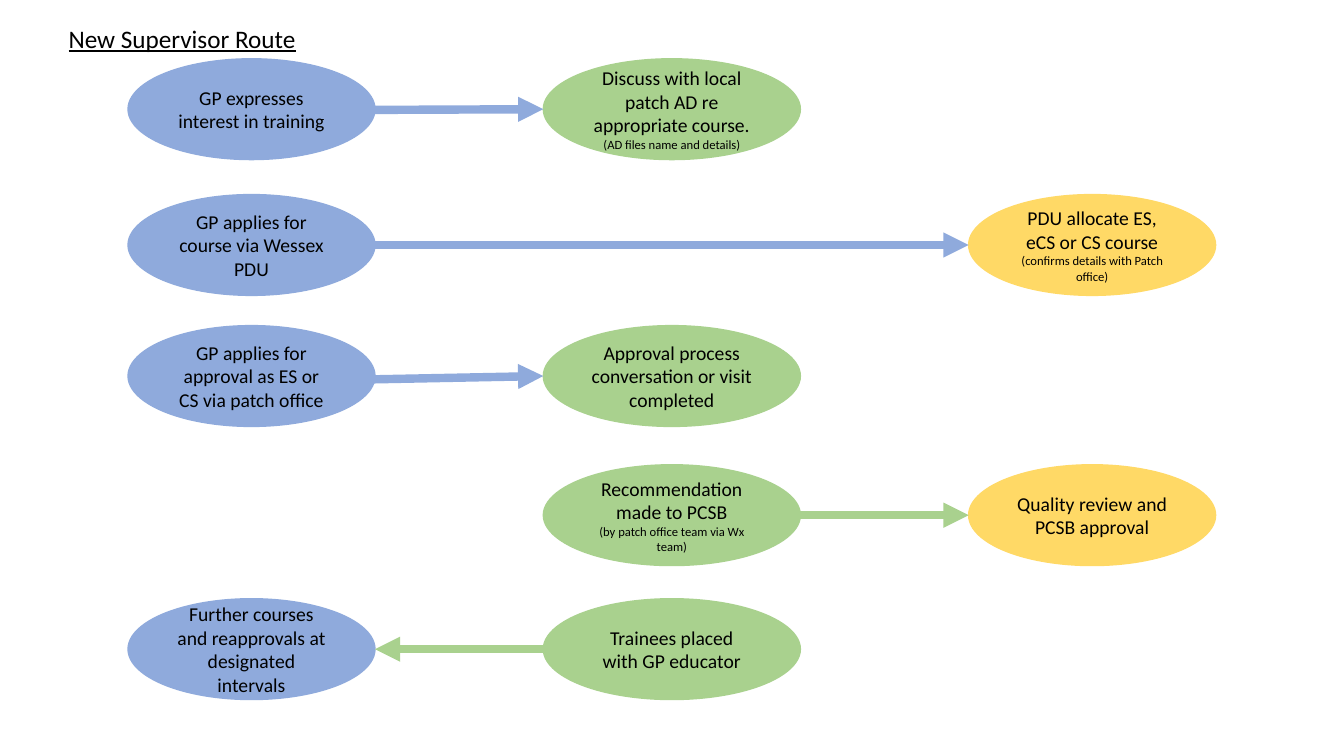
from collections import namedtuple

from lxml.etree import SubElement
from pptx import Presentation
from pptx.dml.color import RGBColor
from pptx.enum.shapes import MSO_CONNECTOR as Connector, MSO_SHAPE as Shape
from pptx.enum.text import MSO_ANCHOR as Anchor, MSO_AUTO_SIZE as AutoSize, PP_ALIGN as Align
from pptx.oxml.ns import qn
from pptx.util import Pt

Box = namedtuple("Box", "left top width height")
Lane = namedtuple("Lane", "left width colour")

BLACK = "000000"
STEP_HEIGHT = 72
LANES = {
    "gp": Lane(0, 176.4, "8FAADC"),
    "patch": Lane(296.64, 183.6, "A9D18E"),
    "pdu": Lane(600.48, 176.4, "FFD966"),
}
ROW_TOPS = [0, 97, 190.6, 290, 385.7]
STEPS = [
    ("gp", 0, "GP expresses interest in training", ""),
    ("gp", 1, "GP applies for course via Wessex PDU", ""),
    ("gp", 2, "GP applies for approval as ES or CS via patch office", ""),
    ("gp", 4, "Further courses and reapprovals at designated intervals", ""),
    ("patch", 0, "Discuss with local patch AD re appropriate course.",
     "(AD files name and details)"),
    ("patch", 2, "Approval process conversation or visit completed", ""),
    ("patch", 3, "Recommendation made to PCSB", "(by patch office team via Wx team)"),
    ("patch", 4, "Trainees placed with GP educator", ""),
    ("pdu", 1, "PDU allocate ES, eCS or CS course", "(confirms details with Patch office)"),
    ("pdu", 3, "Quality review and PCSB approval", ""),
]
ARROWS = [
    ("gp", "patch", 0, 0, 0.5),
    ("gp", "pdu", 1, 0, 0),
    ("gp", "patch", 2, 28, 2.9),
    ("patch", "pdu", 3, 17, 0),
    ("patch", "gp", 4, 0, 0),
]


def rgb(colour):
    return RGBColor.from_string(colour)


def apply(target, values):
    for name, value in values.items():
        setattr(target, name, value)


def write(para, text, size, align, underline=None):
    para.alignment = align
    span = para.add_run()
    span.text = text
    apply(span.font, {"name": "Calibri", "size": Pt(size), "underline": underline})
    span.font.color.rgb = rgb(BLACK)


def add_title(page, box, text):
    title = page.shapes.title
    apply(title, {name: Pt(value) for name, value in box._asdict().items()})
    frame = title.text_frame
    apply(frame, {"word_wrap": False, "auto_size": AutoSize.SHAPE_TO_FIT_TEXT,
                  "vertical_anchor": Anchor.TOP})
    write(frame.paragraphs[0], text, 18, Align.LEFT, True)


def add_step(page, box, colour, text, note):
    step = page.shapes.add_shape(Shape.OVAL, *map(Pt, box))
    step.shadow.inherit = False
    step.fill.solid()
    step.fill.fore_color.rgb = rgb(colour)
    step.line.color.rgb = rgb(colour)
    step.line.width = Pt(1)
    frame = step.text_frame
    apply(frame, {"word_wrap": True, "vertical_anchor": Anchor.MIDDLE})
    write(frame.paragraphs[0], text, 14, Align.CENTER)
    if note:
        write(frame.add_paragraph(), note, 9, Align.CENTER)


def add_arrow(page, start, end, colour):
    arrow = page.shapes.add_connector(Connector.STRAIGHT, *map(Pt, start + end))
    arrow.line.color.rgb = rgb(colour)
    arrow.line.width = Pt(6)
    SubElement(arrow.line._get_or_add_ln(), qn("a:tailEnd"), type="triangle")
    SubElement(arrow._element.spPr, qn("a:effectLst"))


def add_route(page, box):
    for lane_name, row, text, note in STEPS:
        lane = LANES[lane_name]
        place = Box(box.left + lane.left, box.top + ROW_TOPS[row], lane.width, STEP_HEIGHT)
        add_step(page, place, lane.colour, text, note)
    for source_name, target_name, row, overlap, drop in ARROWS:
        source, target = LANES[source_name], LANES[target_name]
        middle = box.top + ROW_TOPS[row] + STEP_HEIGHT / 2
        if source.left < target.left:
            start, end = source.left + source.width - overlap, target.left
        else:
            start, end = source.left, target.left + target.width
        add_arrow(page, (box.left + start, middle + drop), (box.left + end, middle),
                  source.colour)


def main():
    deck = Presentation()
    apply(deck, {"slide_width": Pt(960), "slide_height": Pt(540)})
    page = deck.slides.add_slide(deck.slide_layouts[5])
    add_title(page, Box(41.76, 12.96, 178.56, 28.8), "New Supervisor Route")
    add_route(page, Box(91.44, 42, 776.88, 457.7))
    deck.save("out.pptx")


if __name__ == "__main__":
    main()
